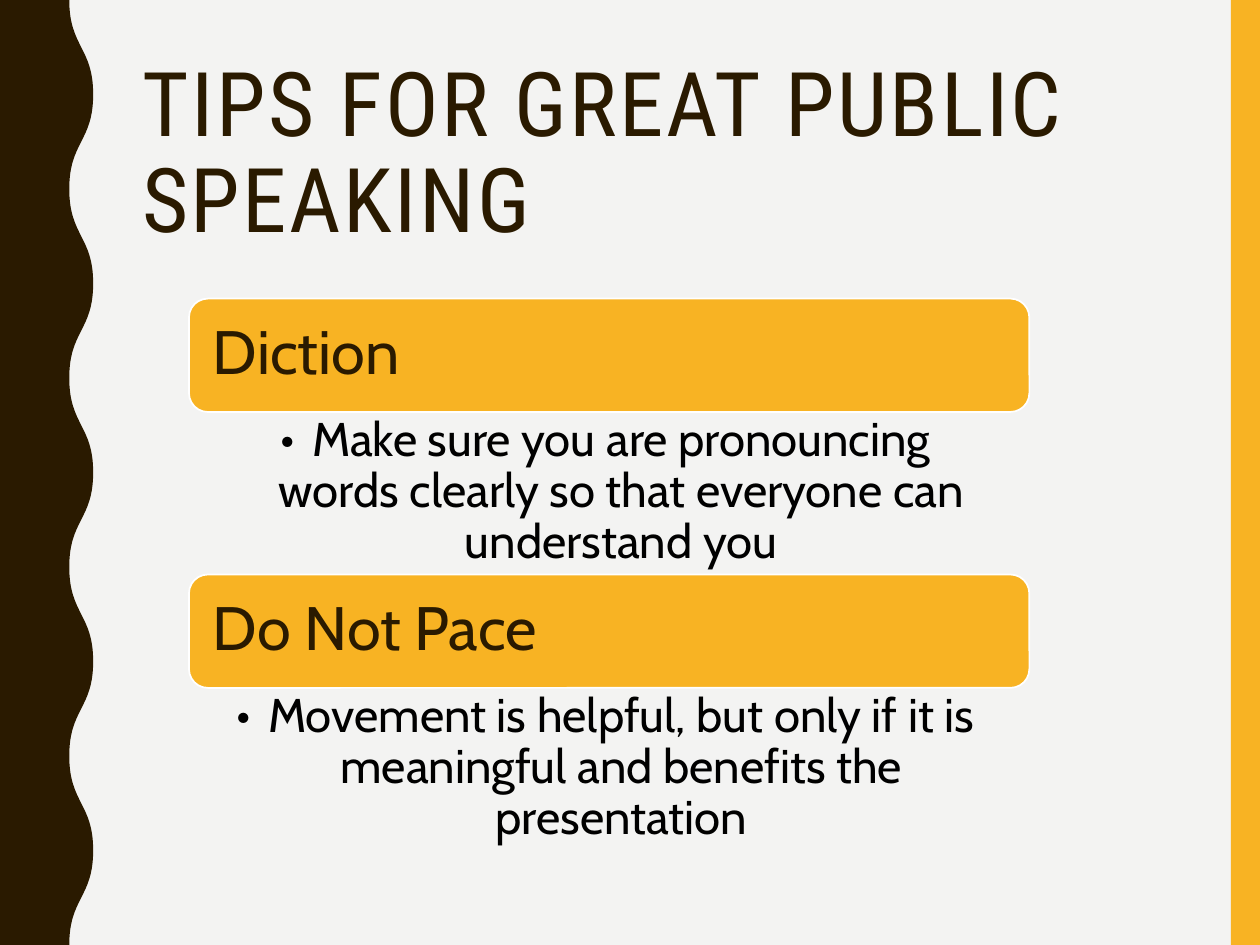
from dataclasses import dataclass

import pptx
import pptx.dml.color
import pptx.enum.shapes
import pptx.enum.text
import pptx.oxml.ns
import pptx.util
from lxml import etree
from pptx.util import Inches

COLORS = {
    "background": "F3F3F2",
    "accent": "F8B323",
    "dark": "2A1A00",
    "body": "000000",
    "outline": "FFFFFF",
}
HEADING_FONT = "Roboto Condensed"
BODY_FONT = "Cabin"
SLIDE_WIDTH, SLIDE_HEIGHT = 10, 7.5
STRIPE_WIDTH = 0.23
WAVE_TROUGH, WAVE_CREST, HALF_WAVE = 0.55, 0.74, 0.75
TIP_LEFT, TIP_WIDTH = 1.5, 6.67
BAR_HEIGHT, LABEL_HEIGHT, DETAIL_HEIGHT = 0.9, 0.81, 1.31
FIRST_TIP_TOP, TIP_PITCH = 2.37, 2.19
LABEL_INSET, DETAIL_OFFSET = 0.04, 0.88


@dataclass(frozen=True)
class Box:
    left: float
    top: float
    width: float
    height: float

    def lengths(self) -> tuple:
        return tuple(Inches(n) for n in (self.left, self.top, self.width, self.height))


@dataclass(frozen=True)
class TextStyle:
    font: str
    size: float
    color: str
    insets: tuple
    centered: bool = False
    middle: bool = False
    bullet: bool = False
    tracking: float = 0


@dataclass(frozen=True)
class Tip:
    heading: str
    detail: str


TITLE_STYLE = TextStyle(HEADING_FONT, 51, "dark", (0.1, 0.05, 0.1, 0.05),
                        middle=True, tracking=1.5)
LABEL_STYLE = TextStyle(BODY_FONT, 35, "dark", (0.15,) * 4, middle=True)
DETAIL_STYLE = TextStyle(BODY_FONT, 27, "body", (0.21, 0.05, 0.27, 0.05),
                         centered=True, bullet=True)

TIPS = [
    Tip("Diction",
        "Make sure you are pronouncing words clearly so that everyone can understand you"),
    Tip("Do Not Pace",
        "Movement is helpful, but only if it is meaningful and benefits the presentation"),
]


def rgb(name: str) -> pptx.dml.color.RGBColor:
    return pptx.dml.color.RGBColor.from_string(COLORS[name])


def paint(shape, fill: str, outline: str = "") -> None:
    shape.shadow.inherit = False
    shape.fill.solid()
    shape.fill.fore_color.rgb = rgb(fill)
    if outline:
        shape.line.color.rgb = rgb(outline)
        shape.line.width = pptx.util.Pt(1)
    else:
        shape.line.fill.background()


def add_text(slide, box: Box, text: str, style: TextStyle) -> None:
    frame = slide.shapes.add_textbox(*box.lengths()).text_frame
    frame.word_wrap = True
    (frame.margin_left, frame.margin_top,
     frame.margin_right, frame.margin_bottom) = map(Inches, style.insets)
    anchors = pptx.enum.text.MSO_ANCHOR
    frame.vertical_anchor = anchors.MIDDLE if style.middle else anchors.TOP
    paragraph = frame.paragraphs[0]
    paragraph.line_spacing = 0.9
    alignments = pptx.enum.text.PP_ALIGN
    paragraph.alignment = alignments.CENTER if style.centered else alignments.LEFT
    if style.bullet:
        paragraph.level = 1
        properties = paragraph._p.get_or_add_pPr()
        properties.set("marL", str(Inches(0.25)))
        properties.set("indent", str(Inches(-0.25)))
        qn = pptx.oxml.ns.qn
        etree.SubElement(properties, qn("a:buFont")).set("typeface", style.font)
        etree.SubElement(properties, qn("a:buChar")).set("char", "•")
    run = paragraph.add_run()
    run.text = text
    run.font.name = style.font
    run.font.size = pptx.util.Pt(style.size)
    run.font.color.rgb = rgb(style.color)
    if style.tracking:
        run.font._element.set("spc", str(round(style.tracking * 100)))


def bend(segment, start: tuple, end: tuple) -> None:
    qn = pptx.oxml.ns.qn
    segment.tag = qn("a:cubicBezTo")
    middle = (start[1] + end[1]) // 2
    for place, x in enumerate((start[0], end[0])):
        control = etree.Element(qn("a:pt"), x=str(x), y=str(middle))
        segment.insert(place, control)


def add_wavy_edge(slide) -> None:
    half_waves = round(SLIDE_HEIGHT / HALF_WAVE)
    wave = [(Inches(WAVE_CREST if turn % 2 else WAVE_TROUGH), Inches(turn * HALF_WAVE))
            for turn in range(half_waves + 1)]
    builder = slide.shapes.build_freeform(*wave[0], scale=1.0)
    builder.add_line_segments(wave[1:] + [(0, Inches(SLIDE_HEIGHT)), (0, 0)], close=True)
    edge = builder.convert_to_shape()
    segments = list(edge._element.iter(pptx.oxml.ns.qn("a:lnTo")))
    for segment, start, end in zip(segments, wave, wave[1:]):
        bend(segment, start, end)
    paint(edge, "dark")


def add_tip(slide, tip: Tip, top: float) -> None:
    presets = pptx.enum.shapes.MSO_SHAPE
    bar = Box(TIP_LEFT, top, TIP_WIDTH, BAR_HEIGHT)
    paint(slide.shapes.add_shape(presets.ROUNDED_RECTANGLE, *bar.lengths()),
          "accent", "outline")
    label = Box(TIP_LEFT + LABEL_INSET, top + LABEL_INSET,
                TIP_WIDTH - 2 * LABEL_INSET, LABEL_HEIGHT)
    add_text(slide, label, tip.heading, LABEL_STYLE)
    detail = Box(TIP_LEFT, top + DETAIL_OFFSET, TIP_WIDTH, DETAIL_HEIGHT)
    add_text(slide, detail, tip.detail, DETAIL_STYLE)


def main() -> None:
    deck = pptx.Presentation()
    deck.slide_width, deck.slide_height = Inches(SLIDE_WIDTH), Inches(SLIDE_HEIGHT)
    slide = deck.slides.add_slide(deck.slide_layouts[6])
    slide.background.fill.solid()
    slide.background.fill.fore_color.rgb = rgb("background")

    stripe = Box(SLIDE_WIDTH - STRIPE_WIDTH, 0, STRIPE_WIDTH, SLIDE_HEIGHT)
    paint(slide.shapes.add_shape(pptx.enum.shapes.MSO_SHAPE.RECTANGLE,
                                 *stripe.lengths()), "accent")
    add_wavy_edge(slide)
    add_text(slide, Box(1.03, 0.42, 8.35, 1.63),
             "TIPS FOR GREAT PUBLIC SPEAKING", TITLE_STYLE)
    for index, tip in enumerate(TIPS):
        add_tip(slide, tip, FIRST_TIP_TOP + index * TIP_PITCH)
    deck.save("out.pptx")


if __name__ == "__main__":
    main()
